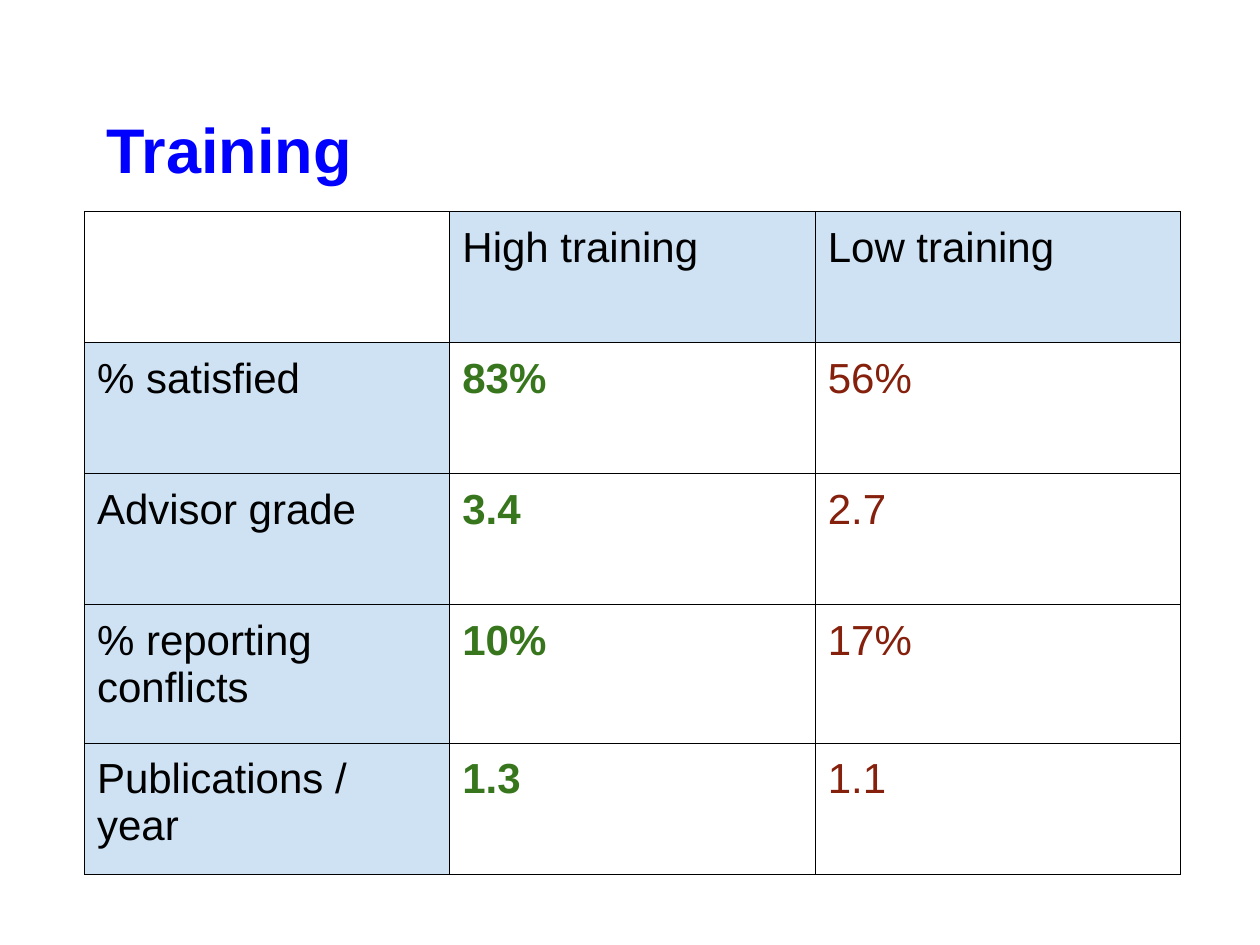
from dataclasses import dataclass

from lxml import etree
from pptx import Presentation
from pptx.dml.color import RGBColor
from pptx.enum.text import MSO_ANCHOR
from pptx.oxml.ns import qn
from pptx.util import Inches, Pt

BOTTOM = MSO_ANCHOR.BOTTOM
SIDES = ("a:lnL", "a:lnR", "a:lnT", "a:lnB")
BLANK = 6


@dataclass(frozen=True)
class Theme:
    font: str = "Arial"
    title: str = "0000FF"
    ink: str = "000000"
    head: str = "CFE2F3"
    good: str = "38761D"
    bad: str = "85200C"
    big: int = 36
    body: int = 24
    rule: float = 0.75
    pad: float = 0.1


class Deck:
    """Holds the theme and the current slide; places are shares of its size."""

    def __init__(self, theme, wide, high):
        self.theme = theme
        self.prs = Presentation()
        self.prs.slide_width = Inches(wide)
        self.prs.slide_height = Inches(high)
        self.slide = self.prs.slides.add_slide(self.prs.slide_layouts[BLANK])

    def place(self, x, y, w, h):
        wide, high = self.prs.slide_width, self.prs.slide_height
        return [round(n) for n in (x * wide, y * high, w * wide, h * high)]

    def pad(self, box):
        for side in ("left", "right", "top", "bottom"):
            setattr(box, f"margin_{side}", Inches(self.theme.pad))

    def label(self, frame, text, size, color, bold=False):
        run = frame.paragraphs[0].add_run()
        run.text = text
        style = {"name": self.theme.font, "size": Pt(size), "bold": bold}
        for key, value in style.items():
            setattr(run.font, key, value)
        run.font.color.rgb = RGBColor.from_string(color)

    def title(self, text, spot, indent):
        frame = self.slide.shapes.add_textbox(*self.place(*spot)).text_frame
        frame.word_wrap = True
        frame.vertical_anchor = BOTTOM
        self.pad(frame)
        self.label(frame, text, self.theme.big, self.theme.title, True)
        props = frame.paragraphs[0]._p.get_or_add_pPr()
        props.set("indent", str(Inches(indent)))

    def border(self, cell):
        props = cell._tc.get_or_add_tcPr()
        for side in SIDES:
            line = etree.SubElement(props, qn(side), w=str(Pt(self.theme.rule)))
            fill = etree.SubElement(line, qn("a:solidFill"))
            etree.SubElement(fill, qn("a:srgbClr"), val=self.theme.ink)

    def cell(self, cell, text, color, bold, shade):
        self.pad(cell)
        self.border(cell)
        if shade:
            cell.fill.solid()
            cell.fill.fore_color.rgb = RGBColor.from_string(self.theme.head)
        else:
            cell.fill.background()
        if text:
            self.label(cell.text_frame, text, self.theme.body, color, bold)

    def table(self, data, spot, tall):
        """Fill a grid of equal columns; tall lists row heights as shares."""
        theme = self.theme
        looks = ((theme.ink, False), (theme.good, True), (theme.bad, False))
        shape = self.slide.shapes.add_table(
            len(data), len(data[0]), *self.place(*spot, sum(tall)))
        table = shape.table
        table.first_row = table.horz_banding = False
        for r, line in enumerate(data):
            table.rows[r].height = round(tall[r] * self.prs.slide_height)
            for c, text in enumerate(line):
                shade = (r == 0) != (c == 0)
                color, bold = looks[c if r else 0]
                self.cell(table.cell(r, c), text, color, bold, shade)


def main():
    deck = Deck(Theme(), 10, 7.5)
    deck.title("Training", (0.05, 0.04, 0.9, 0.17), 0.25)
    row, deep = 1.04 / 7.5, 1.1 / 7.5
    deck.table([
        ("", "High training", "Low training"),
        ("% satisfied", "83%", "56%"),
        ("Advisor grade", "3.4", "2.7"),
        ("% reporting conflicts", "10%", "17%"),
        ("Publications / year", "1.3", "1.1"),
    ], (0.67 / 10, 1.68 / 7.5, 0.87), (row, row, row, deep, row))
    deck.prs.save("out.pptx")


if __name__ == "__main__":
    main()
